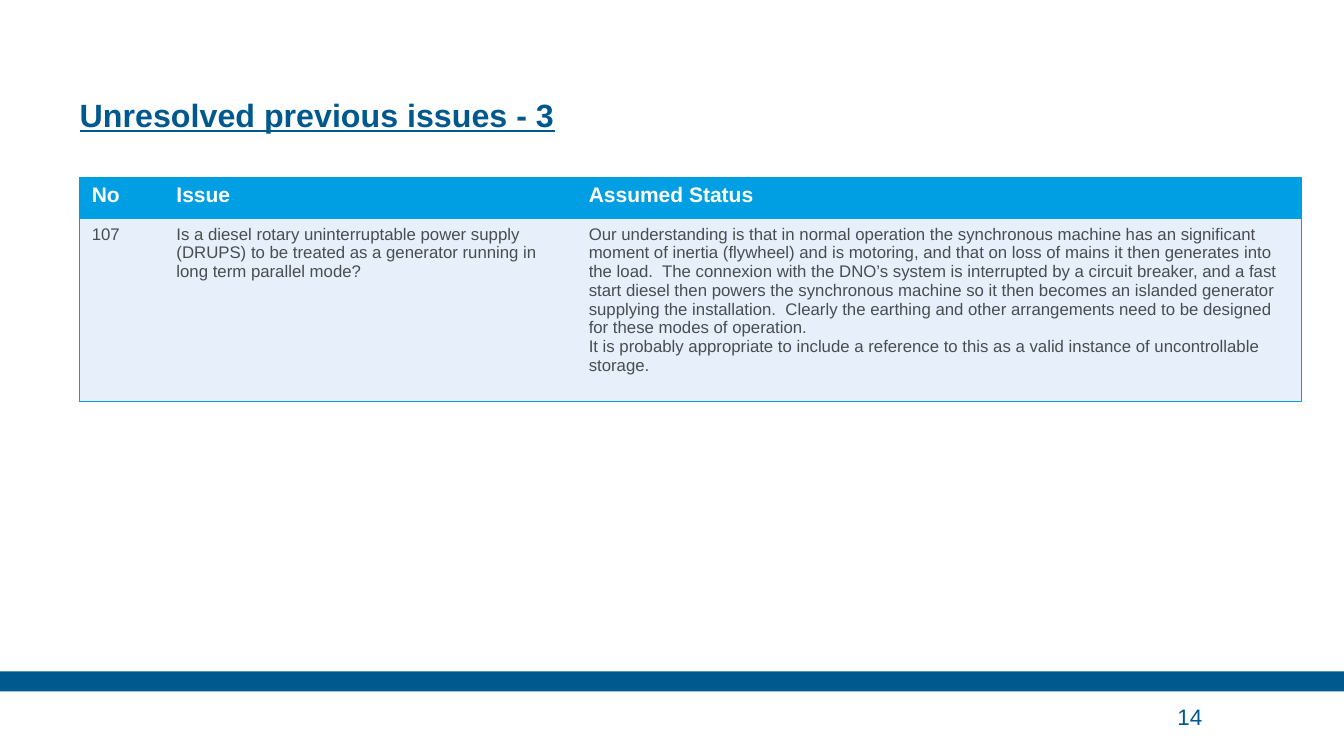
"""Build the slide of unresolved issues with its status table."""
from dataclasses import dataclass

from lxml import etree
from pptx import Presentation
from pptx.dml.color import RGBColor
from pptx.enum.shapes import MSO_SHAPE
from pptx.enum.text import MSO_ANCHOR, PP_ALIGN
from pptx.oxml.ns import qn
from pptx.slide import Slide
from pptx.table import _Cell
from pptx.text.text import TextFrame, _Paragraph
from pptx.util import Inches, Length, Pt

RECT = MSO_SHAPE.RECTANGLE
LEFT = PP_ALIGN.LEFT
TOP, MIDDLE, BOTTOM = MSO_ANCHOR.TOP, MSO_ANCHOR.MIDDLE, MSO_ANCHOR.BOTTOM
NAVY = RGBColor(0x00, 0x59, 0x8E)
SKY = RGBColor(0x00, 0x9F, 0xE3)
PALE = RGBColor(0xE7, 0xF0, 0xFA)
GREY = RGBColor(0x48, 0x4D, 0x51)
WHITE = RGBColor(0xFF, 0xFF, 0xFF)
WIDTH, HEIGHT = Inches(13.33), Inches(7.5)
FONT = "Arial"


@dataclass(frozen=True)
class Box:
    """A place on the slide, in percent of its width and height."""
    left: float
    top: float
    width: float
    height: float

    def place(self) -> tuple[Length, Length, Length, Length]:
        """Return the box as lengths."""
        return across(self.left), down(self.top), across(self.width), down(self.height)


@dataclass(frozen=True)
class Style:
    """The look of a run of text."""
    size: float
    ink: RGBColor
    bold: bool = False
    line: bool = False


@dataclass(frozen=True)
class Row:
    """A table row with its height in percent and paragraphs by cell."""
    height: float
    fill: RGBColor
    style: Style
    cells: tuple[tuple[str, ...], ...]
    pitch: float | None = None


BAND = Box(0, 88.8, 100, 2.67)
TITLE = Box(5.93, 4.13, 73.8, 13.6)
PAGE = Box(87.6, 92.13, 9.23, 5.2)
TABLE = Box(5.93, 23.47, 90.91, 29.6)
COLUMNS = (6.3, 30.68, 53.93)
ROWS = (
    Row(5.47, SKY, Style(15, WHITE, bold=True),
        (("No",), ("Issue",), ("Assumed Status",))),
    Row(24.13, PALE, Style(12, GREY), (
        ("107",),
        ("Is a diesel rotary uninterruptable power supply (DRUPS) to be treated "
         "as a generator running in long term parallel mode?",),
        ("Our understanding is that in normal operation the synchronous machine "
         "has an significant moment of inertia (flywheel) and is motoring, and that "
         "on loss of mains it then generates into the load.  The connexion with the "
         "DNO’s system is interrupted by a circuit breaker, and a fast start diesel "
         "then powers the synchronous machine so it then becomes an islanded "
         "generator supplying the installation.  Clearly the earthing and other "
         "arrangements need to be designed for these modes of operation.",
         "It is probably appropriate to include a reference to this as a valid "
         "instance of uncontrollable storage."),
    ), pitch=13.4),
)


def across(share: float) -> Length:
    """Turn a percent of the slide's width into a length."""
    return Length(round(WIDTH * share / 100))


def down(share: float) -> Length:
    """Turn a percent of the slide's height into a length."""
    return Length(round(HEIGHT * share / 100))


def write(para: _Paragraph, text: str, style: Style) -> None:
    """Add one styled run to a paragraph."""
    para.alignment = LEFT
    run = para.add_run()
    run.text = text
    font = run.font
    font.name, font.size = FONT, Pt(style.size)
    font.bold, font.underline = style.bold, style.line
    font.color.rgb = style.ink


def frame_text(frame: TextFrame, anchor: MSO_ANCHOR) -> None:
    """Wrap a text frame and strip its margins."""
    frame.word_wrap = True
    frame.vertical_anchor = anchor
    frame.margin_left = frame.margin_right = 0
    frame.margin_top = frame.margin_bottom = 0


def edge_cell(cell: _Cell, edges: dict[str, bool]) -> None:
    """Draw or clear the four borders of a cell."""
    props = cell._tc.get_or_add_tcPr()
    for spot, (side, shown) in enumerate(edges.items()):
        line = etree.Element(qn(f"a:ln{side}"), w=str(Pt(1)))
        if shown:
            fill = etree.SubElement(line, qn("a:solidFill"))
            etree.SubElement(fill, qn("a:srgbClr"), val=str(SKY))
        else:
            etree.SubElement(line, qn("a:noFill"))
        props.insert(spot, line)


def fill_cell(cell: _Cell, row: Row, texts: tuple[str, ...]) -> None:
    """Format a cell and write its paragraphs."""
    cell.fill.solid()
    cell.fill.fore_color.rgb = row.fill
    cell.vertical_anchor = TOP
    cell.margin_left = cell.margin_right = Inches(0.12)
    cell.margin_top = cell.margin_bottom = Inches(0.06)
    frame = cell.text_frame
    for index, text in enumerate(texts):
        para = frame.add_paragraph() if index else frame.paragraphs[0]
        if row.pitch:
            para.line_spacing = Pt(row.pitch)
        write(para, text, row.style)


def add_band(slide: Slide) -> None:
    """Draw the band above the page number."""
    band = slide.shapes.add_shape(RECT, *BAND.place())
    band.shadow.inherit = False
    band.fill.solid()
    band.fill.fore_color.rgb = NAVY
    band.line.fill.background()


def add_title(slide: Slide) -> None:
    """Place and write the title."""
    title = slide.shapes.title
    title.left, title.top, title.width, title.height = TITLE.place()
    frame_text(title.text_frame, BOTTOM)
    para = title.text_frame.paragraphs[0]
    para.line_spacing = Pt(30)
    write(para, "Unresolved previous issues - 3", Style(23, NAVY, True, True))


def add_page(slide: Slide) -> None:
    """Write the page number."""
    frame = slide.shapes.add_textbox(*PAGE.place()).text_frame
    frame_text(frame, MIDDLE)
    write(frame.paragraphs[0], "14", Style(16, NAVY))


def add_issues(slide: Slide) -> None:
    """Build the table of issues."""
    table = slide.shapes.add_table(len(ROWS), len(COLUMNS), *TABLE.place()).table
    table.horz_banding = False
    for column, share in zip(table.columns, COLUMNS):
        column.width = across(share)
    last = len(COLUMNS) - 1
    for down_at, row in enumerate(ROWS):
        table.rows[down_at].height = down(row.height)
        for at, texts in enumerate(row.cells):
            cell = table.cell(down_at, at)
            fill_cell(cell, row, texts)
            edge_cell(cell, {"L": at == 0, "R": at == last, "T": True, "B": True})


def main() -> None:
    """Build and save the deck."""
    deck = Presentation()
    deck.slide_width, deck.slide_height = WIDTH, HEIGHT
    slide = deck.slides.add_slide(deck.slide_layouts.get_by_name("Title Only"))
    add_band(slide)
    add_title(slide)
    add_page(slide)
    add_issues(slide)
    deck.save("out.pptx")


if __name__ == "__main__":
    main()
